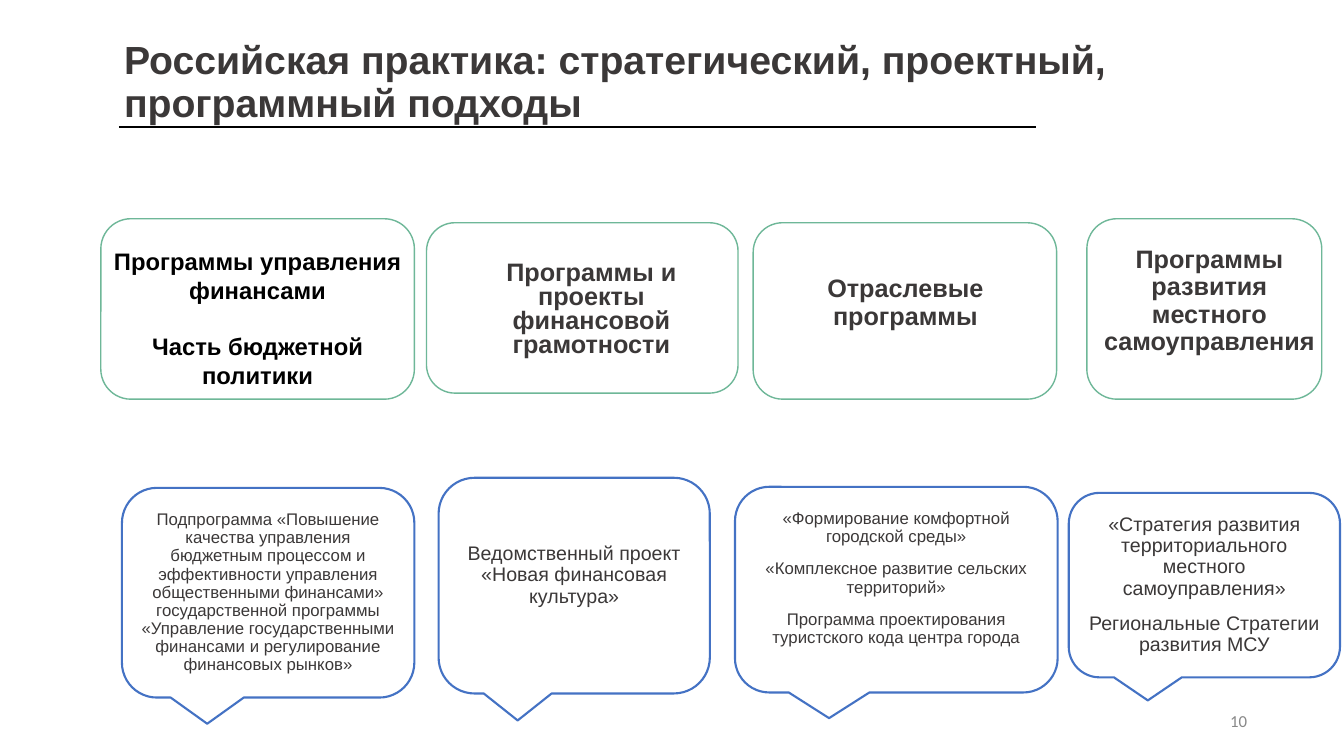
from pptx import Presentation
from pptx.dml.color import RGBColor
from pptx.enum import shapes, text
from pptx.oxml.ns import qn
from pptx.util import Inches, Pt
from lxml import etree

GRAPHITE = RGBColor(0x3B, 0x38, 0x38)
BLACK = RGBColor(0, 0, 0)
WHITE = RGBColor(0xFF, 0xFF, 0xFF)
GRAY = RGBColor(0x88, 0x88, 0x88)
GREEN = RGBColor(0x6E, 0xB7, 0x98)
BLUE = RGBColor(0x44, 0x72, 0xC4)

CENTER = text.PP_ALIGN.CENTER
TOP, MIDDLE = text.MSO_ANCHOR.TOP, text.MSO_ANCHOR.MIDDLE
HEADING = dict(size=18, bold=True)

# Programme frames: frame box, label box, paragraphs, label format
PROGRAMMES = [
    ((1, 2.17, 3.11, 1.79), (0.89, 2.4, 3.33, 1.53),
     ["Программы управления финансами", "Часть бюджетной политики"],
     dict(size=17, bold=True, color=BLACK, spacing=1.0, before=20, side=0.1)),
    ((4.23, 2.21, 3.09, 1.69), (4.69, 2.55, 2.35, 1.14),
     ["Программы и проекты финансовой грамотности"], dict(HEADING, spacing=0.8)),
    ((7.47, 2.21, 3.01, 1.75), (7.85, 2.69, 2.26, 0.73),
     ["Отраслевые программы"], HEADING),
    ((10.78, 2.17, 2.33, 1.79), (10.88, 2.4, 2.23, 1.76),
     ["Программы развития местного самоуправления"], HEADING),
]
BODY_LABEL = 2  # this label sits in the body placeholder

# Example callouts: box, paragraphs, text format
EXAMPLES = [
    ((1.21, 4.84, 2.9, 2.08),
     ["Подпрограмма «Повышение качества управления бюджетным процессом и "
      "эффективности управления общественными финансами» государственной программы "
      "«Управление государственными финансами и регулирование финансовых рынков»"],
     dict(size=12)),
    ((4.35, 4.74, 2.69, 2.14),
     ["Ведомственный проект «Новая финансовая культура»"],
     dict(size=14, bottom=0.25)),
    ((7.29, 4.83, 3.2, 2.04),
     ["«Формирование комфортной городской среды»",
      "«Комплексное развитие сельских территорий»",
      "Программа проектирования туристского кода центра города"],
     dict(size=12, bottom=0.27)),
    ((10.6, 4.89, 2.69, 1.83),
     ["«Стратегия развития территориального местного самоуправления»",
      "Региональные Стратегии развития МСУ"],
     dict(size=14)),
]


def inches(box):
    return [Inches(value) for value in box]


def place(shape, box):
    shape.left, shape.top, shape.width, shape.height = inches(box)


def write(shape, paragraphs, size, bold=False, color=GRAPHITE, font="Arial",
          align=CENTER, anchor=TOP, spacing=0.9, before=10, side=0.05,
          bottom=0.05, wrap=True):
    frame = shape.text_frame
    frame.auto_size = text.MSO_AUTO_SIZE.NONE
    frame.word_wrap = wrap
    frame.vertical_anchor = anchor
    frame.margin_left = frame.margin_right = Inches(side)
    frame.margin_top, frame.margin_bottom = Inches(0.05), Inches(bottom)
    for index, content in enumerate(paragraphs):
        paragraph = frame.add_paragraph() if index else frame.paragraphs[0]
        paragraph.alignment = align
        paragraph.line_spacing = spacing
        paragraph.space_before = Pt(before if index else 0)
        properties = paragraph._p.get_or_add_pPr()
        properties.set("marL", "0")
        properties.set("indent", "0")
        etree.SubElement(properties, qn("a:buNone"))
        run = paragraph.add_run()
        run.text = content
        run.font.name, run.font.size, run.font.bold = font, Pt(size), bold
        run.font.color.rgb = color


def add_outline(slide, kind, box, color, width, fill=None):
    shape = slide.shapes.add_shape(kind, *inches(box))
    shape.shadow.inherit = False
    if fill is None:
        shape.fill.background()
    else:
        shape.fill.solid()
        shape.fill.fore_color.rgb = fill
    shape.line.color.rgb = color
    shape.line.width = Pt(width)
    return shape


def add_title(slide, box):
    title = slide.shapes.title
    place(title, box)
    write(title, ["Российская практика: стратегический, проектный, программный подходы"],
          size=28, bold=True, align=text.PP_ALIGN.LEFT, anchor=MIDDLE)
    # Rule under the title
    left, top = box[0], box[1] + 1.16
    rule = slide.shapes.add_connector(
        shapes.MSO_CONNECTOR.STRAIGHT, *inches((left, top, left + 9.1, top)))
    rule.line.color.rgb = BLACK
    rule.line.width = Pt(0.75)
    etree.SubElement(rule._element.spPr, qn("a:effectLst"))


def add_programmes(slide):
    for index, (frame_box, label_box, paragraphs, style) in enumerate(PROGRAMMES):
        add_outline(slide, shapes.MSO_SHAPE.ROUNDED_RECTANGLE, frame_box, GREEN, 1)
        if index == BODY_LABEL:
            label = slide.placeholders[1]
            place(label, label_box)
        else:
            label = slide.shapes.add_textbox(*inches(label_box))
        write(label, paragraphs, **style)


def add_examples(slide):
    for box, paragraphs, style in EXAMPLES:
        callout = add_outline(slide, shapes.MSO_SHAPE.ROUNDED_RECTANGULAR_CALLOUT,
                              box, BLUE, 1.5, WHITE)
        write(callout, paragraphs, anchor=MIDDLE, **style)


def add_page_number(slide, box):
    number = slide.shapes.add_textbox(*inches(box))
    write(number, ["10"], size=12, color=GRAY, font="Calibri",
          align=text.PP_ALIGN.RIGHT, anchor=MIDDLE, spacing=1.0, wrap=False)


def main():
    presentation = Presentation()
    presentation.slide_width, presentation.slide_height = Inches(13.33), Inches(7.5)
    slide = presentation.slides.add_slide(presentation.slide_layouts[1])
    add_title(slide, (1.18, 0.1, 11.5, 1.45))
    add_programmes(slide)
    add_examples(slide)
    add_page_number(slide, (12.12, 7, 0.3, 0.3))
    presentation.save("out.pptx")


if __name__ == "__main__":
    main()
